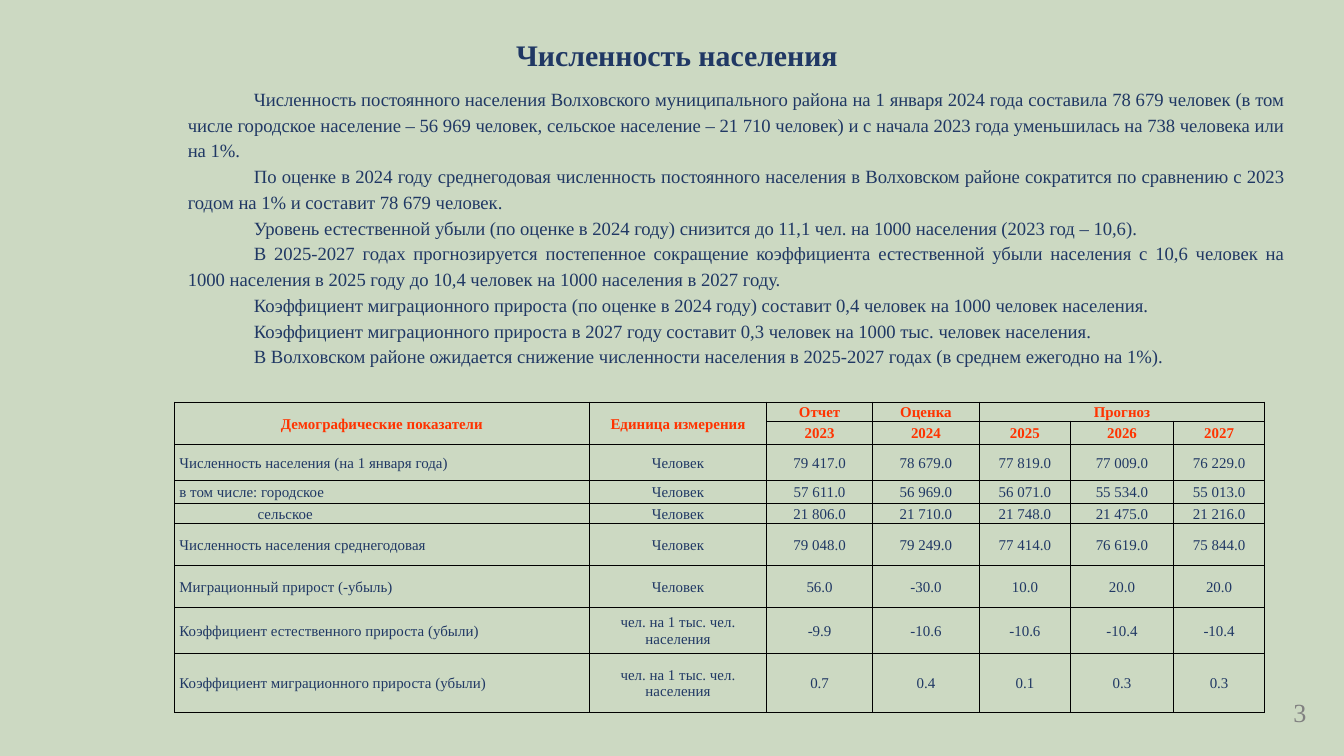
"""Build the population slide with its commentary and demographic table."""
from dataclasses import dataclass

from lxml import etree
from pptx import Presentation
from pptx.dml.color import RGBColor
from pptx.enum.text import MSO_ANCHOR, MSO_AUTO_SIZE, PP_ALIGN
from pptx.oxml.ns import qn
from pptx.util import Cm, Pt

LEFT, CENTER, RIGHT, JUSTIFY = PP_ALIGN.LEFT, PP_ALIGN.CENTER, PP_ALIGN.RIGHT, PP_ALIGN.JUSTIFY
TOP, MIDDLE = MSO_ANCHOR.TOP, MSO_ANCHOR.MIDDLE
GROW = MSO_AUTO_SIZE.SHAPE_TO_FIT_TEXT


@dataclass(frozen=True)
class Theme:
    font: str = "Times New Roman"
    background: str = "CCD9C2"
    text: str = "203864"
    header: str = "FF3300"
    number: str = "808080"
    border: str = "000000"
    title_size: float = 16
    body_size: float = 10
    table_size: float = 8
    number_size: float = 14
    border_width: float = 0.5


@dataclass(frozen=True)
class Box:
    left: float
    top: float
    width: float
    height: float

    def lengths(self) -> tuple:
        return Cm(self.left), Cm(self.top), Cm(self.width), Cm(self.height)


@dataclass(frozen=True)
class Indicator:
    name: str
    unit: str
    values: tuple
    height: float
    indent: float = 0.07


@dataclass(frozen=True)
class Heading:
    text: str
    row: int
    col: int
    rows: int = 1
    cols: int = 1


THEME = Theme()
TITLE_BOX = Box(9.5, 0.56, 11, 0.94)
BODY_BOX = Box(3.3, 1.47, 21.21, 5.64)
TABLE_BOX = Box(3.3, 7.6, 20.6, 5.84)
NUMBER_BOX = Box(24.2, 13.03, 0.62, 0.86)
FIRST_LINE = 1.25
COLUMNS = (7.84, 3.35, 2.0, 2.02, 1.72, 1.95, 1.72)
HEADING_ROWS = (0.34, 0.45)
PERSON = "Человек"
RATE = "чел. на 1 тыс. чел. населения"

PARAGRAPHS = (
    "Численность постоянного населения Волховского муниципального района на 1 января 2024 года "
    "составила 78 679 человек (в том числе городское население – 56 969 человек, сельское население "
    "– 21 710 человек) и с начала 2023 года уменьшилась на 738 человека или на 1%.",
    "По оценке в 2024 году среднегодовая численность постоянного населения в Волховском районе "
    "сократится по сравнению с 2023 годом на 1% и составит 78 679 человек.",
    "Уровень естественной убыли (по оценке в 2024 году) снизится до 11,1 чел. на 1000 населения "
    "(2023 год – 10,6).",
    "В 2025-2027 годах прогнозируется постепенное сокращение коэффициента естественной убыли "
    "населения с 10,6 человек на 1000 населения в 2025 году до 10,4 человек на 1000 населения "
    "в 2027 году.",
    "Коэффициент миграционного прироста (по оценке в 2024 году) составит 0,4 человек на 1000 "
    "человек населения.",
    "Коэффициент миграционного прироста в 2027 году составит 0,3 человек на 1000 тыс. человек "
    "населения.",
    "В Волховском районе ожидается снижение численности населения в 2025-2027 годах (в среднем "
    "ежегодно на 1%).",
)

HEADINGS = (
    Heading("Демографические показатели", 0, 0, rows=2),
    Heading("Единица измерения", 0, 1, rows=2),
    Heading("Отчет", 0, 2),
    Heading("Оценка", 0, 3),
    Heading("Прогноз", 0, 4, cols=3),
    *(Heading(str(2023 + i), 1, 2 + i) for i in range(5)),
)

INDICATORS = (
    Indicator("Численность населения (на 1 января года)", PERSON,
              ("79 417.0", "78 679.0", "77 819.0", "77 009.0", "76 229.0"), 0.68),
    Indicator("в том числе: городское", PERSON,
              ("57 611.0", "56 969.0", "56 071.0", "55 534.0", "55 013.0"), 0.43),
    Indicator("сельское", PERSON,
              ("21 806.0", "21 710.0", "21 748.0", "21 475.0", "21 216.0"), 0.38, 1.55),
    Indicator("Численность населения среднегодовая", PERSON,
              ("79 048.0", "79 249.0", "77 414.0", "76 619.0", "75 844.0"), 0.79),
    Indicator("Миграционный прирост (-убыль)", PERSON,
              ("56.0", "-30.0", "10.0", "20.0", "20.0"), 0.79),
    Indicator("Коэффициент естественного прироста (убыли)", RATE,
              ("-9.9", "-10.6", "-10.6", "-10.4", "-10.4"), 0.87),
    Indicator("Коэффициент миграционного прироста (убыли)", RATE,
              ("0.7", "0.4", "0.1", "0.3", "0.3"), 1.12),
)


def style(p, size: float, color: str, align, bold: bool = False) -> None:
    p.alignment = align
    p.font.name = THEME.font
    p.font.size = Pt(size)
    p.font.bold = bold
    p.font.color.rgb = RGBColor.from_string(color)


def indent(p, left: float = 0, first: float = 0) -> None:
    props = p._p.get_or_add_pPr()
    props.set("marL", str(Cm(left)))
    props.set("indent", str(Cm(first)))


def add_title(slide, text: str) -> None:
    sp = slide.shapes.title
    sp.left, sp.top, sp.width, sp.height = TITLE_BOX.lengths()
    tf = sp.text_frame
    tf.text = text
    tf.vertical_anchor = TOP
    tf.auto_size = GROW
    style(tf.paragraphs[0], THEME.title_size, THEME.text, LEFT, bold=True)


def add_text(slide, box: Box, texts: tuple, size: float, color: str, align):
    tf = slide.shapes.add_textbox(*box.lengths()).text_frame
    tf.word_wrap = True
    tf.auto_size = GROW
    tf.text = "\n".join(texts)
    for p in tf.paragraphs:
        style(p, size, color, align)
    return tf


def format_cell(cell) -> None:
    props = cell._tc.get_or_add_tcPr()
    for side in ("lnL", "lnR", "lnT", "lnB"):
        line = etree.SubElement(props, qn(f"a:{side}"), w=str(Pt(THEME.border_width)))
        fill = etree.SubElement(line, qn("a:solidFill"))
        etree.SubElement(fill, qn("a:srgbClr"), val=THEME.border)
    cell.fill.background()
    cell.vertical_anchor = MIDDLE
    cell.margin_left = cell.margin_right = cell.margin_top = Cm(0.02)
    cell.margin_bottom = 0
    style(cell.text_frame.paragraphs[0], THEME.table_size, THEME.text, CENTER)


def fill_cell(cell, text: str, color: str, align=CENTER, bold: bool = False):
    cell.text = text
    p = cell.text_frame.paragraphs[0]
    style(p, THEME.table_size, color, align, bold)
    return p


def add_indicator_table(slide) -> None:
    heights = HEADING_ROWS + tuple(item.height for item in INDICATORS)
    table = slide.shapes.add_table(len(heights), len(COLUMNS), *TABLE_BOX.lengths()).table
    table.first_row = table.horz_banding = False
    for column, width in zip(table.columns, COLUMNS):
        column.width = Cm(width)
    for row, height in zip(table.rows, heights):
        row.height = Cm(height)
    for cell in table.iter_cells():
        format_cell(cell)
    for head in HEADINGS:
        cell = table.cell(head.row, head.col)
        if head.rows * head.cols > 1:
            cell.merge(table.cell(head.row + head.rows - 1, head.col + head.cols - 1))
        fill_cell(cell, head.text, THEME.header, bold=True)
    for row, item in enumerate(INDICATORS, len(HEADING_ROWS)):
        indent(fill_cell(table.cell(row, 0), item.name, THEME.text, LEFT), item.indent)
        for col, text in enumerate((item.unit, *item.values), 1):
            fill_cell(table.cell(row, col), text, THEME.text)


def main() -> None:
    prs = Presentation()
    prs.slide_width, prs.slide_height = Cm(25.4), Cm(14.29)
    slide = prs.slides.add_slide(prs.slide_layouts[5])
    slide.background.fill.solid()
    slide.background.fill.fore_color.rgb = RGBColor.from_string(THEME.background)
    add_title(slide, "Численность населения")
    body = add_text(slide, BODY_BOX, PARAGRAPHS, THEME.body_size, THEME.text, JUSTIFY)
    for p in body.paragraphs:
        p.line_spacing = 1.15
        indent(p, first=FIRST_LINE)
    add_indicator_table(slide)
    number = add_text(slide, NUMBER_BOX, ("3",), THEME.number_size, THEME.number, RIGHT)
    number.margin_left = number.margin_right = Cm(0.13)
    prs.save("out.pptx")


if __name__ == "__main__":
    main()
